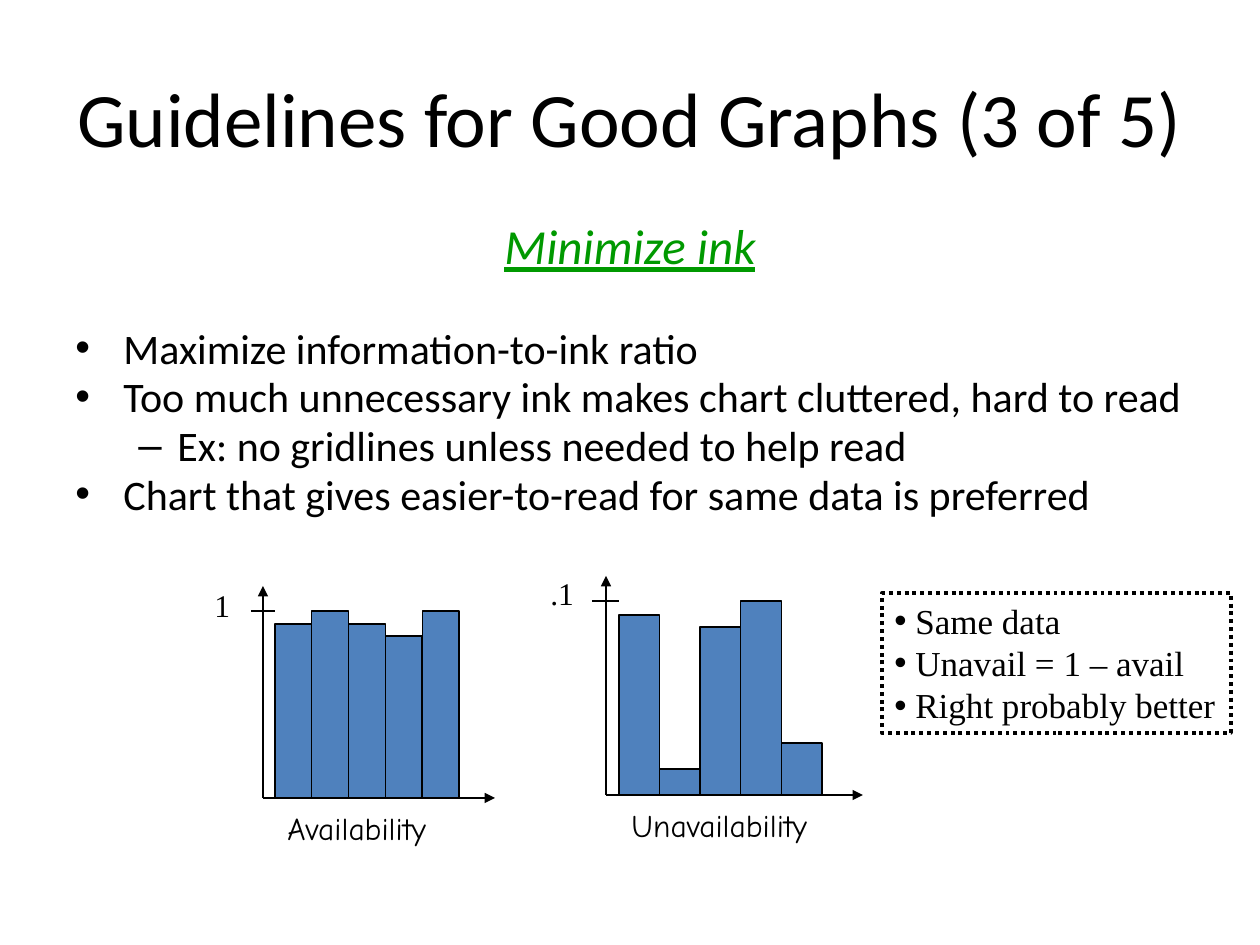
"""Build the slide on minimizing ink, with two hand-drawn bar graphs."""
from lxml.etree import SubElement
from pptx import Presentation
from pptx.dml.color import RGBColor
from pptx.enum.dml import MSO_LINE
from pptx.enum.shapes import MSO_CONNECTOR, MSO_SHAPE
from pptx.enum.text import MSO_ANCHOR, PP_ALIGN
from pptx.oxml.ns import qn
from pptx.util import Inches, Pt

PX = Inches(1) / 126
COLORS = {"text": "000000", "accent": "009900", "bar": "4F81BD"}

TITLE = "Guidelines for Good Graphs (3 of 5)"
SUBTITLE = "Minimize ink"
POINTS = [
    (0, "Maximize information-to-ink ratio"),
    (0, "Too much unnecessary ink makes chart cluttered, hard to read"),
    (1, "Ex: no gridlines unless needed to help read"),
    (0, "Chart that gives easier-to-read for same data is preferred"),
]
LEVELS = [("•", 48, -48), ("–", 102, -39)]
NOTES = ["Same data", "Unavail = 1 – avail", "Right probably better"]
GRAPHS = [
    {"name": "Availability", "name_box": (275, 803, 189, 50),
     "scale": "1", "scale_box": (202, 580, 42, 50),
     "origin": (263, 798), "tips": (495, 586), "tick": (251, 275),
     "bars_right": 459, "heights": [174, 187, 174, 162, 187]},
    {"name": "Unavailability", "name_box": (619, 800, 222, 50),
     "scale": ".1", "scale_box": (538, 568, 49, 50),
     "origin": (606, 795), "tips": (863, 576), "tick": (592, 619),
     "bars_right": 822, "heights": [180, 26, 168, 194, 52]},
]


def emu(*lengths):
    return [round(length * PX) for length in lengths]


def color(name):
    return RGBColor.from_string(COLORS[name])


def set_font(paragraph, name, size, color_name="text"):
    font = paragraph.font
    font.name, font.size = name, Pt(size)
    font.color.rgb = color(color_name)
    return font


def set_indent(paragraph, margin, indent, bullet=None):
    properties = paragraph._p.get_or_add_pPr()
    margin, indent = emu(margin, indent)
    properties.set("marL", str(margin))
    properties.set("indent", str(indent))
    if bullet:
        SubElement(properties, qn("a:buFont")).set("typeface", "Arial")
        SubElement(properties, qn("a:buChar")).set("char", bullet)


def add_paragraphs(frame, texts):
    for index, text in enumerate(texts):
        paragraph = frame.add_paragraph() if index else frame.paragraphs[0]
        paragraph.text = text
        yield paragraph


def add_label(shapes, text, box, font_name):
    frame = shapes.add_textbox(*emu(*box)).text_frame
    frame.word_wrap = False
    for paragraph in add_paragraphs(frame, [text]):
        set_font(paragraph, font_name, 18)


def add_rectangle(shapes, box, line_width):
    shape = shapes.add_shape(MSO_SHAPE.RECTANGLE, *emu(*box))
    shape.shadow.inherit = False
    shape.line.color.rgb = color("text")
    shape.line.width = Pt(line_width)
    return shape


def add_line(shapes, start, end, arrow=False):
    line = shapes.add_connector(MSO_CONNECTOR.STRAIGHT, *emu(*start, *end))
    line.line.color.rgb = color("text")
    line.line.width = Pt(0.75)
    if arrow:
        SubElement(line.line._get_or_add_ln(), qn("a:tailEnd")).set("type", "triangle")
    SubElement(line._element.spPr, qn("a:effectLst"))


def add_graph(slide, graph):
    shapes = slide.shapes.add_group_shape().shapes
    axis_x, base = graph["origin"]
    tip_x, tip_y = graph["tips"]
    tick_left, bars_left = graph["tick"]
    heights = graph["heights"]
    width = (graph["bars_right"] - bars_left) / len(heights)
    for index, height in enumerate(heights):
        box = (bars_left + index * width, base - height, width, height)
        bar = add_rectangle(shapes, box, 0.75)
        bar.fill.solid()
        bar.fill.fore_color.rgb = color("bar")
    tick_y = base - max(heights)
    add_line(shapes, (axis_x, base), (axis_x, tip_y), arrow=True)
    add_line(shapes, (axis_x, base), (tip_x, base), arrow=True)
    add_line(shapes, (tick_left, tick_y), (bars_left, tick_y))
    add_label(shapes, graph["scale"], graph["scale_box"], "Times New Roman")
    add_label(shapes, graph["name"], graph["name_box"], "Comic Neue")


def add_body(slide):
    frame = slide.shapes.add_textbox(*emu(63, 221, 1134, 624)).text_frame
    frame.word_wrap = True
    subtitle, *points = add_paragraphs(frame, [SUBTITLE] + [text for _, text in POINTS])
    set_indent(subtitle, 48, -48)
    subtitle.alignment = PP_ALIGN.CENTER
    subtitle.line_spacing = 0.8
    font = set_font(subtitle, "Calibri", 28, "accent")
    font.italic = font.underline = True
    for paragraph, (level, _) in zip(points, POINTS):
        bullet, margin, indent = LEVELS[level]
        set_indent(paragraph, margin, indent, bullet)
        paragraph.level = level
        paragraph.line_spacing = 0.8
        paragraph.space_before = Pt(33 if paragraph is points[0] else 4.8)
        set_font(paragraph, "Calibri", 24)


def add_notes_box(slide):
    shape = add_rectangle(slide.shapes, (882, 593, 349, 140), 2.25)
    shape.fill.background()
    shape.line.dash_style = MSO_LINE.ROUND_DOT
    frame = shape.text_frame
    frame.word_wrap = False
    frame.vertical_anchor = MSO_ANCHOR.MIDDLE
    for paragraph in add_paragraphs(frame, NOTES):
        set_indent(paragraph, 21, -21, "•")
        paragraph.alignment = PP_ALIGN.LEFT
        set_font(paragraph, "Times New Roman", 20)


def main():
    presentation = Presentation()
    presentation.slide_width, presentation.slide_height = Inches(10), Inches(7.5)
    slide = presentation.slides.add_slide(presentation.slide_layouts[5])
    title = slide.shapes.title
    title.left, title.top, title.width, title.height = emu(63, 38, 1134, 158)
    title.text_frame.text = TITLE
    title.text_frame.vertical_anchor = MSO_ANCHOR.MIDDLE
    title.text_frame.paragraphs[0].alignment = PP_ALIGN.CENTER
    set_font(title.text_frame.paragraphs[0], "Calibri", 44)
    add_body(slide)
    for graph in GRAPHS:
        add_graph(slide, graph)
    add_notes_box(slide)
    presentation.save("out.pptx")


if __name__ == "__main__":
    main()
